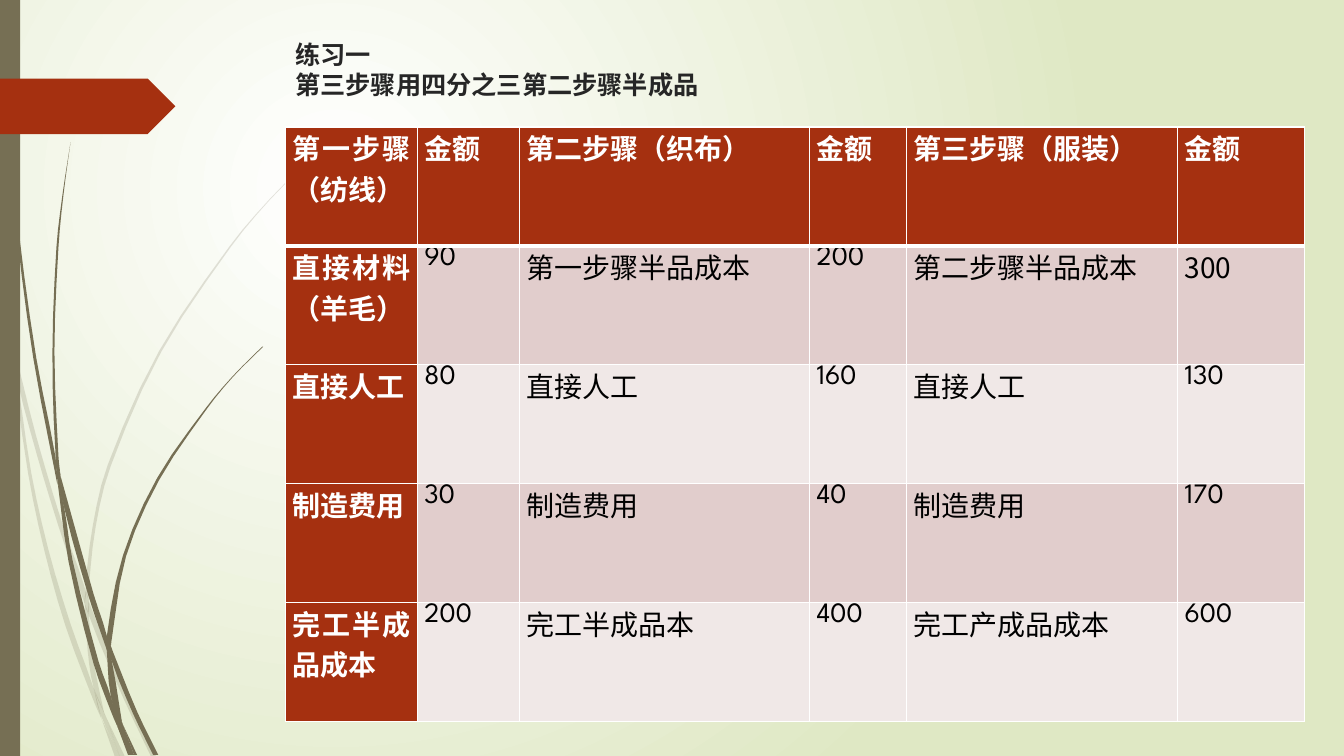
"""Build the step-costing exercise slide with its grass decoration and table."""
from dataclasses import dataclass

from lxml import etree
from pptx import Presentation
from pptx.dml.color import RGBColor
from pptx.enum.shapes import MSO_SHAPE
from pptx.enum.text import MSO_ANCHOR, PP_ALIGN
from pptx.oxml.ns import qn
from pptx.util import Inches, Pt

RECTANGLE = MSO_SHAPE.RECTANGLE
PENTAGON = MSO_SHAPE.PENTAGON
TOP = MSO_ANCHOR.TOP
LEFT = PP_ALIGN.LEFT
JUSTIFY = PP_ALIGN.JUSTIFY

LATIN = "League Spartan"
CHINESE = "Noto Sans CJK SC"
OLIVE, RUST, WHITE, BLACK = "766F54", "A53010", "FFFFFF", "000000"
BANDS = ("E1CDCC", "F0E8E7")
CURVE_STEPS = 3

TITLE = "练习一\v第三步骤用四分之三第二步骤半成品"
COLUMN_WIDTHS = (1.31, 1.01, 2.88, 0.96, 2.69, 1.26)
ROW_HEIGHT = 1.18
ROWS = (
    ("第一步骤（纺线）", "金额", "第二步骤（织布）", "金额", "第三步骤（服装）", "金额"),
    ("直接材料（羊毛）", "90", "第一步骤半品成本", "200", "第二步骤半品成本", "300"),
    ("直接人工", "80", "直接人工", "160", "直接人工", "130"),
    ("制造费用", "30", "制造费用", "40", "制造费用", "170"),
    ("完工半成品成本", "200", "完工半成品本", "400", "完工产成品成本", "600"),
)


@dataclass(frozen=True)
class Blade:
    """A piece of grass: its left and right edges as (x, y) points, top to bottom."""
    left: tuple
    right: tuple


@dataclass(frozen=True)
class Block:
    """A plain preset shape."""
    kind: int
    left: float
    top: float
    width: float
    height: float
    color: str


PALE_BLADES = (
    Blade(((0, 2.82), (0, 2.99), (0.1, 3.44), (0.11, 3.5)),
          ((0, 2.82), (0.09, 3.22), (0.11, 3.5))),
    Blade(((0.14, 3.45), (0.17, 3.76), (0.36, 4.49), (0.58, 5.22), (0.84, 5.99)),
          ((0.14, 3.45), (0.36, 4.33), (0.62, 5.2), (0.85, 5.86), (0.84, 5.99))),
    Blade(((0.88, 5.96), (0.88, 6.1), (1.23, 6.94), (1.5, 7.51)),
          ((0.88, 5.96), (0.92, 6.07), (1.27, 6.92), (1.55, 7.51))),
    Blade(((1.05, 7.11), (1.19, 7.51)), ((1.05, 7.11), (1.24, 7.51))),
    Blade(((0.11, 3.5), (0.28, 4.7), (0.44, 5.46), (0.65, 6.21), (0.92, 6.93), (1.01, 7.14)),
          ((0.11, 3.5), (0.17, 3.76), (0.31, 4.69), (0.48, 5.45), (0.7, 6.19),
           (0.93, 6.83), (1.01, 7.14))),
    Blade(((0.84, 5.99), (0.87, 6.46), (0.93, 6.83), (1.05, 7.11)),
          ((0.84, 5.99), (0.88, 6.1), (0.91, 6.46), (1.03, 7.06), (1.05, 7.11))),
    Blade(((3.12, 1.53), (2.68, 1.97), (2.28, 2.44), (1.58, 3.48), (1.07, 4.61),
           (0.92, 5.22), (0.85, 5.84), (0.88, 5.96)),
          ((3.12, 1.54), (2.68, 1.98), (2.29, 2.45), (1.6, 3.49), (1.1, 4.62),
           (0.95, 5.22), (0.88, 5.84), (0.88, 5.96))),
    Blade(((1.01, 7.14), (1.14, 7.51)), ((1.01, 7.14), (1.19, 7.51))),
    Blade(((0.85, 5.86), (0.84, 5.99), (0.88, 6.1)), ((0.85, 5.86), (0.88, 5.96), (0.88, 6.1))),
    Blade(((0.93, 6.83), (0.99, 7.07), (1.19, 7.51)), ((0.93, 6.83), (1.05, 7.11), (1.19, 7.51))),
)
DARK_BLADES = (
    Blade(((0.03, 0), (0.04, 0.48), (0.07, 1.1), (0.17, 2.33), (0.33, 3.55), (0.57, 4.81)),
          ((0.04, 0), (0.05, 0.48), (0.08, 1.09), (0.19, 2.32), (0.36, 3.55),
           (0.55, 4.53), (0.57, 4.81))),
    Blade(((0.6, 4.72), (0.64, 5.05), (0.88, 5.92), (1.06, 6.45)),
          ((0.6, 4.72), (0.93, 5.9), (1.06, 6.31), (1.06, 6.45))),
    Blade(((1.1, 6.41), (1.11, 6.56), (1.32, 7.08), (1.52, 7.49)),
          ((1.1, 6.41), (1.13, 6.49), (1.36, 7.06), (1.57, 7.49))),
    Blade(((0.57, 4.77), (0.68, 5.57), (0.93, 6.59), (1.11, 7.08), (1.17, 7.22)),
          ((0.57, 4.77), (0.64, 5.05), (0.72, 5.56), (0.98, 6.57), (1.1, 6.91), (1.17, 7.22))),
    Blade(((0.7, 1.41), (0.62, 1.93), (0.56, 2.45), (0.52, 3.49), (0.55, 4.49), (0.6, 4.72)),
          ((0.7, 1.41), (0.63, 1.93), (0.58, 2.45), (0.54, 3.49), (0.58, 4.53), (0.6, 4.72))),
    Blade(((1.22, 7.19), (1.33, 7.49)), ((1.22, 7.19), (1.36, 7.49))),
    Blade(((0.55, 4.49), (0.57, 4.77), (0.64, 5.05)), ((0.55, 4.49), (0.6, 4.72), (0.64, 5.05))),
    Blade(((2.6, 3.44), (2.31, 3.73), (2.04, 4.05), (1.56, 4.74), (1.22, 5.51),
           (1.06, 6.31), (1.1, 6.41)),
          ((2.61, 3.44), (2.31, 3.74), (2.05, 4.06), (1.58, 4.76), (1.25, 5.52),
           (1.11, 6.33), (1.1, 6.41))),
    Blade(((1.17, 7.22), (1.27, 7.49)), ((1.17, 7.22), (1.31, 7.49))),
    Blade(((1.06, 6.45), (1.1, 6.91), (1.22, 7.19)),
          ((1.06, 6.45), (1.11, 6.56), (1.21, 7.16), (1.22, 7.19))),
    Blade(((1.06, 6.31), (1.06, 6.45), (1.11, 6.56)), ((1.06, 6.31), (1.1, 6.41), (1.11, 6.56))),
    Blade(((1.1, 6.91), (1.17, 7.22), (1.3, 7.49)), ((1.1, 6.91), (1.22, 7.19), (1.33, 7.49))),
)
BLOCKS = (
    Block(RECTANGLE, 0, 0, 0.2, 7.5, OLIVE),
    Block(PENTAGON, 0, 0.78, 1.74, 0.55, RUST),
)


def rgb(color: str) -> RGBColor:
    return RGBColor.from_string(color)


def paint_shape(shape, color: str) -> None:
    shape.shadow.inherit = False
    shape.fill.solid()
    shape.fill.fore_color.rgb = rgb(color)
    shape.line.fill.background()


def paint_background(page) -> None:
    fill = page.background.fill
    fill.gradient()
    for stop, position, color in zip(fill.gradient_stops, (0, 1), (WHITE, "DFE8C4")):
        stop.position = position
        stop.color.rgb = rgb(color)
    gradient = page.element.find(".//" + qn("a:gradFill"))
    gradient.remove(gradient.find(qn("a:lin")))
    circle = etree.SubElement(gradient, qn("a:path"), {"path": "circle"})
    etree.SubElement(circle, qn("a:fillToRect"),
                     {"l": "50000", "t": "50000", "r": "100000", "b": "100000"})


def smooth_edge(points: tuple) -> list:
    """Return points on a smooth curve x(y) through the given points."""
    last = len(points) - 1
    if last == 1:
        return list(points)
    slopes = []
    for index in range(last + 1):
        (x0, y0), (x1, y1) = points[max(index - 1, 0)], points[min(index + 1, last)]
        slopes.append((x1 - x0) / (y1 - y0))
    curve = [points[0]]
    for index in range(last):
        (x0, y0), (x1, y1) = points[index:index + 2]
        span = y1 - y0
        for step in range(1, CURVE_STEPS + 1):
            t = step / CURVE_STEPS
            blend = t * t * (3 - 2 * t)
            bend = t * (1 - t) * ((1 - t) * slopes[index] - t * slopes[index + 1])
            curve.append((x0 + (x1 - x0) * blend + span * bend, y0 + span * t))
    return curve


def draw_blade(page, blade: Blade, opacity: int) -> None:
    edges = smooth_edge(blade.left) + smooth_edge(blade.right)[::-1]
    outline = [(Inches(x), Inches(y)) for x, y in edges]
    builder = page.shapes.build_freeform(*outline[0])
    builder.add_line_segments(outline[1:], close=True)
    shape = builder.convert_to_shape()
    paint_shape(shape, OLIVE)
    if opacity < 100:
        color = shape.element.spPr.find(".//" + qn("a:srgbClr"))
        etree.SubElement(color, qn("a:alpha"), {"val": str(opacity * 1000)})


def draw_block(page, block: Block) -> None:
    shape = page.shapes.add_shape(block.kind, Inches(block.left), Inches(block.top),
                                  Inches(block.width), Inches(block.height))
    paint_shape(shape, block.color)


def style_paragraph(para, size: int, color: str, bold: bool, align, face: str = LATIN) -> None:
    para.alignment = align
    font = para.font
    font.size, font.bold, font.name = Pt(size), bold, face
    font.color.rgb = rgb(color)
    latin = para._p.find(".//" + qn("a:latin"))
    latin.addnext(latin.makeelement(qn("a:ea"), {"typeface": CHINESE}))


def draw_title(page) -> None:
    box = page.shapes.add_textbox(Inches(2.83), Inches(0.34), Inches(4.3), Inches(0.74))
    box.text_frame.word_wrap = True
    box.text_frame.vertical_anchor = TOP
    para = box.text_frame.paragraphs[0]
    para.text = TITLE
    style_paragraph(para, 18, "262626", True, LEFT)


def set_borders(cell, widths: dict) -> None:
    properties = cell._tc.get_or_add_tcPr()
    for index, (side, width) in enumerate(widths.items()):
        line = properties.makeelement(qn("a:ln" + side), {"w": str(Pt(width))})
        fill = etree.SubElement(line, qn("a:solidFill"))
        etree.SubElement(fill, qn("a:srgbClr"), {"val": WHITE})
        properties.insert(index, line)


def draw_table(page) -> None:
    frame = page.shapes.add_table(len(ROWS), len(COLUMN_WIDTHS), Inches(2.83), Inches(1.26),
                                  Inches(sum(COLUMN_WIDTHS)), Inches(ROW_HEIGHT * len(ROWS)))
    table = frame.table
    for column, width in zip(table.columns, COLUMN_WIDTHS):
        column.width = Inches(width)
    for row, texts in enumerate(ROWS):
        table.rows[row].height = Inches(ROW_HEIGHT)
        for column, text in enumerate(texts):
            heading = row == 0 or column == 0
            cell = table.cell(row, column)
            cell.margin_left = cell.margin_right = Inches(0.07)
            cell.margin_top = cell.margin_bottom = 0
            cell.fill.solid()
            cell.fill.fore_color.rgb = rgb(RUST if heading else BANDS[(row - 1) % 2])
            set_borders(cell, {"L": 1, "R": 1, "T": 1, "B": 3 if row == 0 else 1})
            para = cell.text_frame.paragraphs[0]
            para.text = text
            style_paragraph(para, 20, WHITE if heading else BLACK, heading, JUSTIFY,
                            CHINESE if text == "300" else LATIN)


def main() -> None:
    deck = Presentation()
    deck.slide_width, deck.slide_height = Inches(13.33), Inches(7.5)
    page = deck.slides.add_slide(deck.slide_layouts[6])
    paint_background(page)
    for blades, opacity in ((PALE_BLADES, 20), (DARK_BLADES, 100)):
        for blade in blades:
            draw_blade(page, blade, opacity)
    for block in BLOCKS:
        draw_block(page, block)
    draw_title(page)
    draw_table(page)
    deck.save("out.pptx")


if __name__ == "__main__":
    main()
